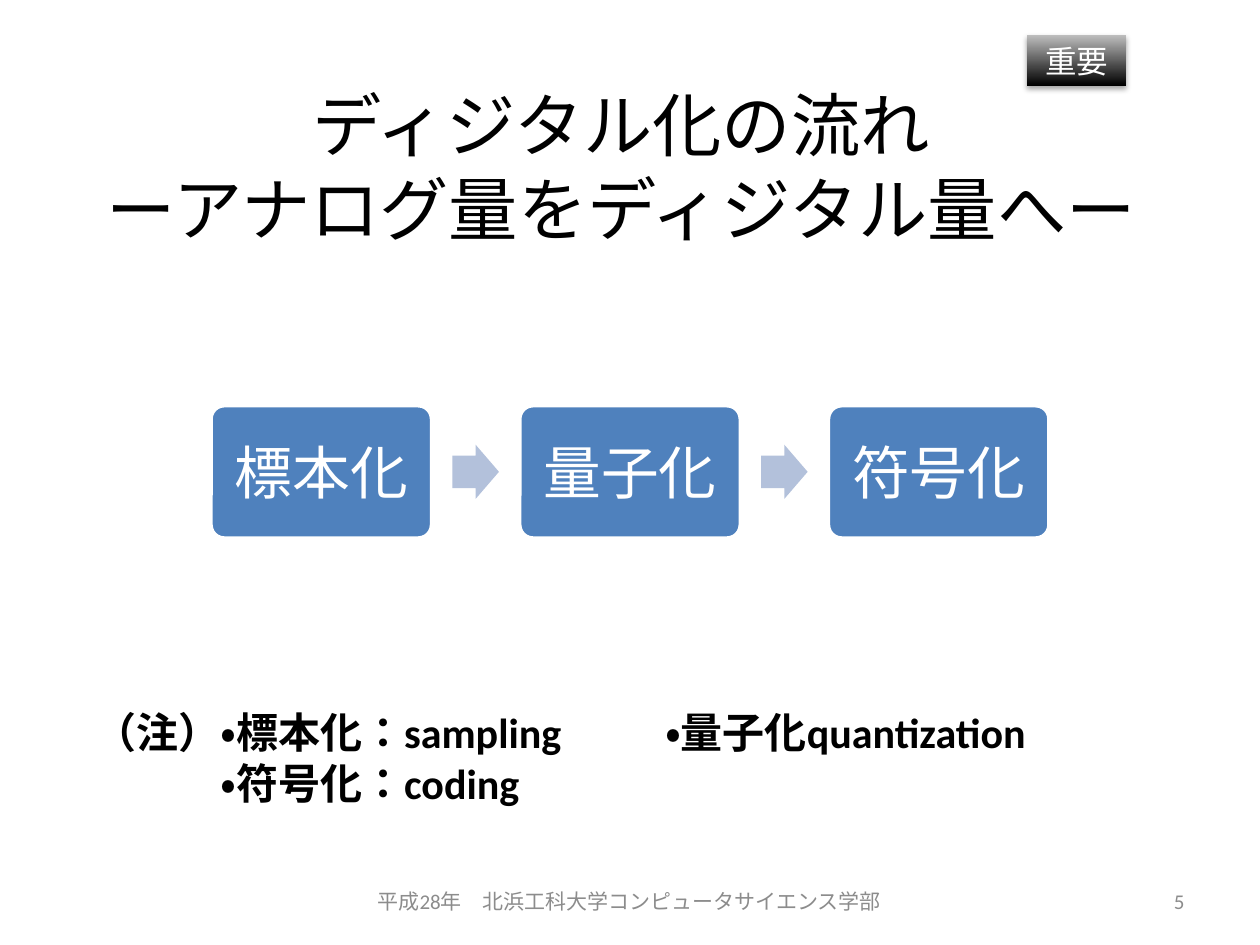
from dataclasses import dataclass

import pptx
import pptx.dml.color
import pptx.enum.lang
import pptx.enum.shapes
import pptx.enum.text
import pptx.oxml
import pptx.oxml.ns
import pptx.util

Inches = pptx.util.Inches
SHAPES = pptx.enum.shapes.MSO_SHAPE
ALIGN = pptx.enum.text.PP_ALIGN
ANCHOR = pptx.enum.text.MSO_ANCHOR

COLORS = {
    "black": "000000",
    "white": "FFFFFF",
    "step": "4F81BD",
    "arrow": "B3C1DB",
    "footer": "8C8C8C",
    "badge_top": "BDBDBD",
}

STEPS = ["標本化", "量子化", "符号化"]
STEP_WIDTH, STEP_HEIGHT, STEP_TOP = 1.75, 1.05, 3.22
STEP_PITCH = 2.45
ARROW_WIDTH, ARROW_HEIGHT = 0.37, 0.43
SLIDE_WIDTH = 10
NOTE_INDENT, NOTE_TAB = 1.0, 4.53


@dataclass
class Box:
    left: float
    top: float
    width: float
    height: float

    def lengths(self) -> list:
        return [Inches(v) for v in (self.left, self.top, self.width, self.height)]


@dataclass
class Style:
    size: float
    color: str
    align: ALIGN = ALIGN.CENTER
    anchor: ANCHOR = ANCHOR.MIDDLE
    bold: bool = False


def rgb(name: str) -> pptx.dml.color.RGBColor:
    return pptx.dml.color.RGBColor.from_string(COLORS[name])


def write(shape, lines: list[str], style: Style) -> None:
    """Fill the shape with one paragraph per line, all in the same style."""
    frame = shape.text_frame
    frame.word_wrap = True
    frame.vertical_anchor = style.anchor
    frame.text = "\n".join(lines)
    for paragraph in frame.paragraphs:
        paragraph.alignment = style.align
        font = paragraph.font
        font.name = "Calibri"
        font.size = pptx.util.Pt(style.size)
        font.bold = style.bold
        font.color.rgb = rgb(style.color)
        font.language_id = pptx.enum.lang.MSO_LANGUAGE_ID.JAPANESE


def add_text(slide, box: Box, lines: list[str], style: Style):
    text_box = slide.shapes.add_textbox(*box.lengths())
    write(text_box, lines, style)
    return text_box


def add_preset(slide, preset: SHAPES, box: Box, fill: str):
    shape = slide.shapes.add_shape(preset, *box.lengths())
    shape.shadow.inherit = False
    shape.fill.solid()
    shape.fill.fore_color.rgb = rgb(fill)
    shape.line.fill.background()
    return shape


def add_flow(slide) -> None:
    first_left = (SLIDE_WIDTH - STEP_WIDTH - STEP_PITCH * (len(STEPS) - 1)) / 2
    gap = STEP_PITCH - STEP_WIDTH
    for index, name in enumerate(STEPS):
        left = first_left + index * STEP_PITCH
        step = add_preset(slide, SHAPES.ROUNDED_RECTANGLE,
                          Box(left, STEP_TOP, STEP_WIDTH, STEP_HEIGHT), "step")
        step.adjustments[0] = 0.1
        step.line.color.rgb = rgb("white")
        step.line.width = pptx.util.Pt(2)
        write(step, [name], Style(33, "white"))
        if index < len(STEPS) - 1:
            arrow_box = Box(left + STEP_WIDTH + (gap - ARROW_WIDTH) / 2,
                            STEP_TOP + (STEP_HEIGHT - ARROW_HEIGHT) / 2,
                            ARROW_WIDTH, ARROW_HEIGHT)
            arrow = add_preset(slide, SHAPES.RIGHT_ARROW, arrow_box, "arrow")
            arrow.adjustments[0] = 0.6
            arrow.adjustments[1] = 0.5


def add_glossary(slide) -> None:
    glossary = add_text(
        slide, Box(0.65, 5.56, 8.56, 0.91),
        ["（注）・標本化：sampling\t・量子化quantization", "・符号化：coding"],
        Style(24, "black", ALIGN.LEFT, ANCHOR.TOP, bold=True))
    first, second = (p._p.get_or_add_pPr() for p in glossary.text_frame.paragraphs)
    tabs = pptx.oxml.parse_xml(
        f'<a:tabLst {pptx.oxml.ns.nsdecls("a")}>'
        f'<a:tab pos="{Inches(NOTE_TAB)}" algn="l"/></a:tabLst>')
    first.insert(0, tabs)
    second.set("marL", str(Inches(NOTE_INDENT)))
    second.set("indent", "0")


def add_badge(slide) -> None:
    badge = add_preset(slide, SHAPES.RECTANGLE, Box(8.15, 0.28, 0.79, 0.4), "black")
    badge.fill.gradient()
    badge.fill.gradient_angle = 90
    for stop, color in zip(badge.fill.gradient_stops, ("black", "badge_top")):
        stop.color.rgb = rgb(color)
    effects = badge._element.spPr.find(pptx.oxml.ns.qn("a:effectLst"))
    effects.append(pptx.oxml.parse_xml(
        f'<a:outerShdw {pptx.oxml.ns.nsdecls("a")} blurRad="{pptx.util.Pt(3.1)}" '
        f'dist="{pptx.util.Pt(1.8)}" dir="5400000" rotWithShape="0">'
        f'<a:srgbClr val="{COLORS["black"]}"><a:alpha val="35000"/></a:srgbClr>'
        '</a:outerShdw>'))
    write(badge, ["重要"], Style(18, "white"))


def main() -> None:
    deck = pptx.Presentation()
    deck.slide_width = Inches(SLIDE_WIDTH)
    deck.slide_height = Inches(7.5)
    slide = deck.slides.add_slide(deck.slide_layouts[6])

    add_text(slide, Box(0.43, 0.69, 9, 1.25),
             ["ディジタル化の流れ", "ーアナログ量をディジタル量へー"],
             Style(39.6, "black"))
    add_flow(slide)
    add_glossary(slide)
    add_text(slide, Box(2.83, 6.95, 4.33, 0.4),
             ["平成28年　北浜工科大学コンピュータサイエンス学部"], Style(12, "footer"))
    add_text(slide, Box(7.17, 6.95, 2.33, 0.4), ["5"],
             Style(12, "footer", ALIGN.RIGHT))
    add_badge(slide)
    deck.save("out.pptx")


if __name__ == "__main__":
    main()
